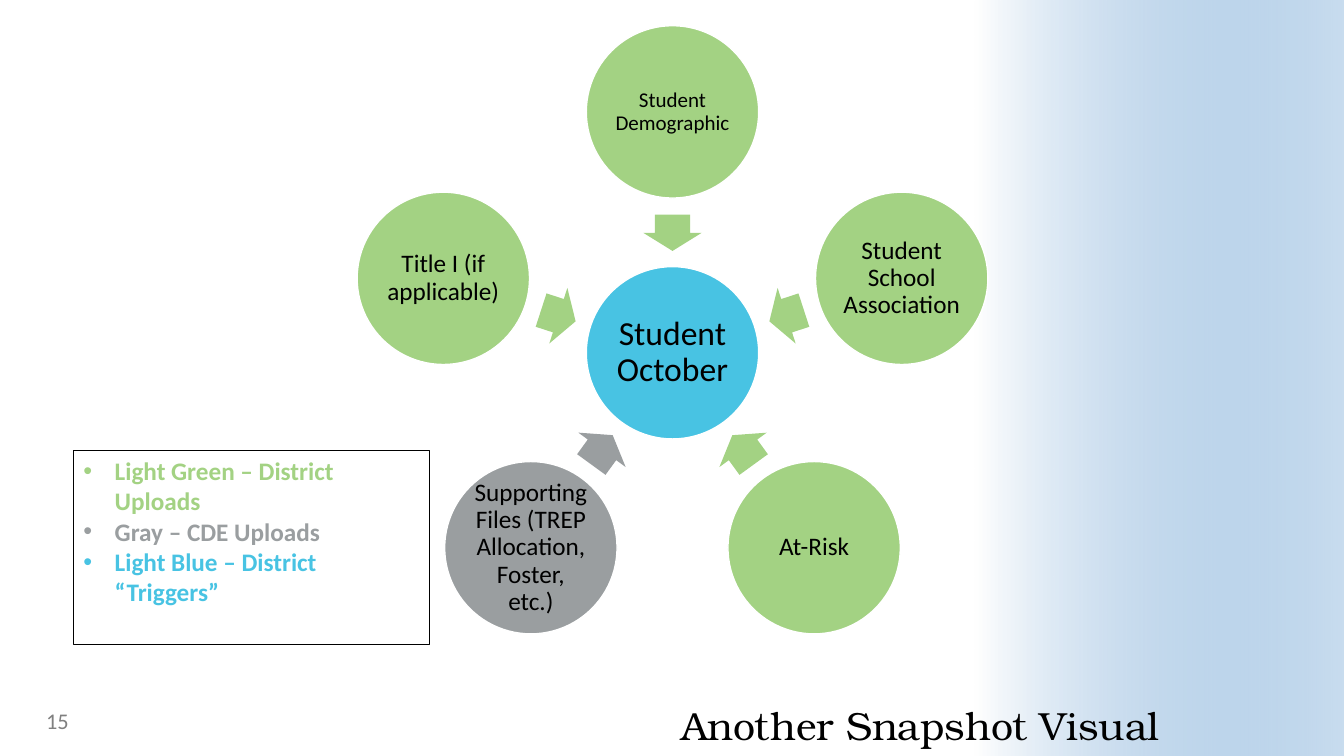
from dataclasses import dataclass
from math import cos, radians, sin

from lxml.etree import SubElement
from pptx import Presentation
from pptx.dml.color import RGBColor
from pptx.enum.shapes import MSO_SHAPE as Shape
from pptx.enum.text import MSO_ANCHOR as Anchor, PP_ALIGN as Align
from pptx.oxml.ns import qn
from pptx.util import Inches, Pt


@dataclass(frozen=True)
class Theme:
    green: str = "A3D283"
    gray: str = "9A9EA0"
    blue: str = "48C3E3"
    band: str = "488BC9"
    white: str = "FFFFFF"
    black: str = "000000"
    muted: str = "808080"
    body_font: str = "Calibri"
    title_font: str = "TeX Gyre Bonum"
    title_size: float = 28
    hub_size: float = 24
    body_size: float = 18
    number_size: float = 16
    small_size: float = 15


def write(paragraph, text, *, size, color, font, bold=False, align=Align.LEFT, spacing=1.0):
    paragraph.alignment = align
    paragraph.line_spacing = spacing
    run = paragraph.add_run()
    run.text = text
    run.font.name = font
    run.font.size = Pt(size)
    run.font.bold = bold
    run.font.color.rgb = RGBColor.from_string(color)


def add_bullet(paragraph, color, indent):
    properties = paragraph._p.get_or_add_pPr()
    properties.set("marL", str(Inches(indent)))
    properties.set("indent", str(-Inches(indent)))
    bullet_color = SubElement(properties, qn("a:buClr"))
    SubElement(bullet_color, qn("a:srgbClr"), val=color)
    SubElement(properties, qn("a:buFont"), typeface="Arial")
    SubElement(properties, qn("a:buChar"), char="•")


def set_frame(shape, anchor, margin=None):
    frame = shape.text_frame
    frame.word_wrap = True
    frame.vertical_anchor = anchor
    if margin is not None:
        frame.margin_left = frame.margin_right = Inches(margin)
        frame.margin_top = frame.margin_bottom = Inches(margin)
    return frame


class SlideBuilder:
    def __init__(self, slide, theme):
        self.slide = slide
        self.theme = theme

    def shape(self, kind, left, top, width, height, fill=None, line=None, line_width=1):
        shape = self.slide.shapes.add_shape(
            kind, Inches(left), Inches(top), Inches(width), Inches(height))
        shape.shadow.inherit = False
        if fill:
            shape.fill.solid()
            shape.fill.fore_color.rgb = RGBColor.from_string(fill)
        else:
            shape.fill.background()
        if line:
            shape.line.color.rgb = RGBColor.from_string(line)
            shape.line.width = Pt(line_width)
        else:
            shape.line.fill.background()
        return shape

    def text(self, text, left, top, width, height, anchor, margin=None, **style):
        box = self.slide.shapes.add_textbox(
            Inches(left), Inches(top), Inches(width), Inches(height))
        write(set_frame(box, anchor, margin).paragraphs[0], text, **style)

    def side_band(self, left, top, width, height, opacity):
        """Turned rectangle that fades from white to a translucent blue on the right."""
        band = self.shape(Shape.RECTANGLE, left, top, width, height)
        band.rotation = 270
        band.fill.gradient()
        band.fill.gradient_angle = 270
        for stop, color in zip(band.fill.gradient_stops, (self.theme.white, self.theme.band)):
            stop.color.rgb = RGBColor.from_string(color)
        end_color = list(band._element.spPr.iter(qn("a:srgbClr")))[-1]
        SubElement(end_color, qn("a:alpha"), val=str(opacity * 1000))

    def circle(self, text, center_x, center_y, diameter, fill, size):
        """Circle with centred text; its margin is a tenth of the type size."""
        circle = self.shape(Shape.OVAL, center_x - diameter / 2, center_y - diameter / 2,
                            diameter, diameter, fill, self.theme.white)
        frame = set_frame(circle, Anchor.MIDDLE, Pt(size / 10).inches)
        write(frame.paragraphs[0], text, size=size, color=self.theme.black,
              font=self.theme.body_font, align=Align.CENTER, spacing=0.9)

    def arrow(self, center_x, center_y, rotation, fill):
        width, height = 0.36, 0.58
        arrow = self.shape(Shape.RIGHT_ARROW, center_x - width / 2, center_y - height / 2,
                           width, height, fill)
        arrow.adjustments[0] = 0.6
        arrow.adjustments[1] = 0.5
        arrow.rotation = rotation % 360

    def radial(self, hub, spokes, center, diameter, circle_radius, arrow_radius):
        """Hub circle with evenly spaced outer circles, clockwise from the top."""
        theme = self.theme
        center_x, center_y = center
        self.circle(hub, center_x, center_y, diameter, theme.blue, theme.hub_size)
        for index, (text, color, size) in enumerate(spokes):
            angle = index * 360 / len(spokes) - 90
            across, down = cos(radians(angle)), sin(radians(angle))
            self.arrow(center_x + arrow_radius * across, center_y + arrow_radius * down,
                       angle + 180, color)
            self.circle(text, center_x + circle_radius * across,
                        center_y + circle_radius * down, diameter, color, size)

    def legend(self, entries, left, top, width, height):
        theme = self.theme
        box = self.shape(Shape.RECTANGLE, left, top, width, height,
                         line=theme.black, line_width=0.75)
        frame = set_frame(box, Anchor.TOP)
        for index, (text, color) in enumerate(entries):
            paragraph = frame.add_paragraph() if index else frame.paragraphs[0]
            add_bullet(paragraph, color, 0.31)
            write(paragraph, text, size=theme.body_size, color=color,
                  font=theme.body_font, bold=True)


def main():
    presentation = Presentation()
    presentation.slide_width = Inches(13.33)
    presentation.slide_height = Inches(7.5)
    theme = Theme()
    slide = presentation.slides.add_slide(presentation.slide_layouts[6])
    builder = SlideBuilder(slide, theme)

    builder.side_band(7.75, 1.92, 7.5, 3.66, opacity=30)
    builder.text("Another Snapshot Visual", 4.26, 6.45, 7.24, 0.98, Anchor.BOTTOM, 0,
                 size=theme.title_size, color=theme.black, font=theme.title_font,
                 align=Align.RIGHT, spacing=0.9)
    spokes = [
        ("Student Demographic", theme.green, theme.small_size),
        ("Student School Association", theme.green, theme.body_size),
        ("At-Risk", theme.green, theme.body_size),
        ("Supporting Files (TREP Allocation, Foster, etc.)", theme.gray, theme.body_size),
        ("Title I (if applicable)", theme.green, theme.body_size),
    ]
    builder.radial("Student October", spokes, center=(6.67, 3.5), diameter=1.71,
                   circle_radius=2.39, arrow_radius=1.19)
    builder.legend([
        ("Light Green – District Uploads", theme.green),
        ("Gray – CDE Uploads", theme.gray),
        ("Light Blue – District “Triggers”", theme.blue),
    ], 0.73, 4.47, 3.53, 1.92)
    builder.text("15", 0.36, 6.95, 3, 0.4, Anchor.MIDDLE,
                 size=theme.number_size, color=theme.muted, font=theme.body_font)

    presentation.save("out.pptx")


if __name__ == "__main__":
    main()
